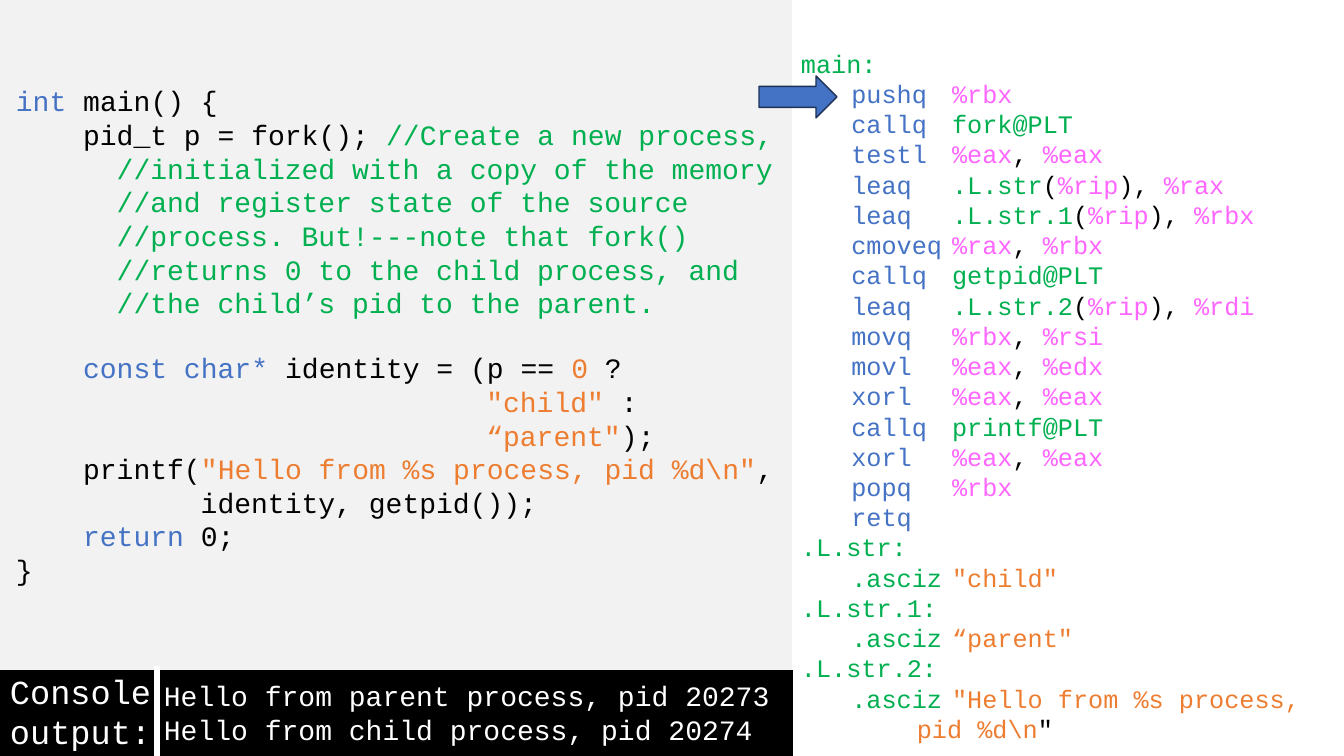
from pptx import Presentation, util as u
from pptx.dml.color import RGBColor
from pptx.enum import shapes, text
from lxml import etree

BLACK, WHITE, GREY = "000000", "FFFFFF", "F2F2F2"
BLUE, GREEN, ORANGE, PINK, NAVY = "4472C4", "00B050", "ED7D31", "FF66FF", "1E3256"
FONT = "Courier New"
PX = 914400 / 100.8
CHAR_WIDTH = 0.6
LINE_HEIGHT = 1.13

C_CODE = [
    (0, [("int", BLUE), (" main() {", BLACK)]),
    (4, [("pid_t p = fork(); ", BLACK), ("//Create a new process,", GREEN)]),
    (6, [("//initialized with a copy of the memory", GREEN)]),
    (6, [("//and register state of the source", GREEN)]),
    (6, [("//process. But!---note that fork()", GREEN)]),
    (6, [("//returns 0 to the child process, and", GREEN)]),
    (6, [("//the child’s pid to the parent.", GREEN)]),
    (4, [("const char* ", BLUE), ("identity = (p == ", BLACK), ("0", ORANGE), (" ?", BLACK)]),
    (28, [('"child"', ORANGE), (" :", BLACK)]),
    (28, [('“parent"', ORANGE), (");", BLACK)]),
    (4, [("printf(", BLACK), ('"Hello from %s process, pid %d\\n"', ORANGE), (",", BLACK)]),
    (11, [("identity, getpid());", BLACK)]),
    (4, [("return", BLUE), (" 0;", BLACK)]),
    (0, [("}", BLACK)]),
]
GAP_BEFORE = 7

ASSEMBLY = [
    ("main:",),
    ("pushq", "%rbx"),
    ("callq", "fork@PLT"),
    ("testl", "%eax", ", ", "%eax"),
    ("leaq", ".L.str", "(", "%rip", "), ", "%rax"),
    ("leaq", ".L.str.1", "(", "%rip", "), ", "%rbx"),
    ("cmoveq", "%rax", ", ", "%rbx"),
    ("callq", "getpid@PLT"),
    ("leaq", ".L.str.2", "(", "%rip", "), ", "%rdi"),
    ("movq", "%rbx", ", ", "%rsi"),
    ("movl", "%eax", ", ", "%edx"),
    ("xorl", "%eax", ", ", "%eax"),
    ("callq", "printf@PLT"),
    ("xorl", "%eax", ", ", "%eax"),
    ("popq", "%rbx"),
    ("retq",),
    (".L.str:",),
    (".asciz", '"child"'),
    (".L.str.1:",),
    (".asciz", '“parent"'),
    (".L.str.2:",),
    (".asciz", '"Hello from %s process,'),
    ("", " pid %d\\n", '"'),
]
ASSEMBLY_TABS = (3, 11)
OPERAND_COLORS = {"%": PINK, '"': ORANGE, "“": ORANGE, " ": ORANGE, "(": BLACK, ")": BLACK, ",": BLACK}

CONSOLE = ["Hello from parent process, pid 20273", "Hello from child process, pid 20274"]


def rgb(color):
    """Turn a hex string into a colour."""
    return RGBColor.from_string(color)


def px(*lengths):
    """Turn pixel lengths into EMU."""
    return [u.Emu(round(n * PX)) for n in lengths]


def chars(count, size):
    """Give the width of a number of characters as an EMU string."""
    return str(int(u.Pt(count * size * CHAR_WIDTH)))


def add_block(parent, kind, box, fill, line=None):
    """Add a filled preset shape."""
    sp = parent.add_shape(kind, *px(*box))
    sp.shadow.inherit = False
    sp.fill.solid()
    sp.fill.fore_color.rgb = rgb(fill)
    if line:
        sp.line.color.rgb = rgb(line)
        sp.line.width = u.Pt(1)
    else:
        sp.line.fill.background()


def add_text(parent, box, size, lines, tabs=()):
    """Add a text box of (indent, runs) lines and return its paragraphs."""
    tf = parent.add_textbox(*px(*box)).text_frame
    tf.word_wrap = True
    tf.auto_size = text.MSO_AUTO_SIZE.SHAPE_TO_FIT_TEXT
    for i, (indent, runs) in enumerate(lines):
        p = tf.paragraphs[0] if i == 0 else tf.add_paragraph()
        pPr = p._p.get_or_add_pPr()
        pPr.set("marL", chars(indent, size))
        pPr.set("indent", "0")
        if tabs:
            ns = pPr.nsmap["a"]
            tab_list = etree.SubElement(pPr, f"{{{ns}}}tabLst")
            for stop in tabs:
                etree.SubElement(tab_list, f"{{{ns}}}tab", pos=chars(stop, size), algn="l")
        for words, color in runs:
            r = p.add_run()
            r.text = words
            r.font.name = FONT
            r.font.size = u.Pt(size)
            r.font.color.rgb = rgb(color)
    return tf.paragraphs


def assembly_line(op, *operands):
    """Colour one line of assembly."""
    if op.endswith(":"):
        return 0, [(op, GREEN)]
    end = "\t" if operands else ""
    runs = [("\t" + op + end, GREEN if op.startswith(".") else BLUE)]
    for i, token in enumerate(operands):
        closing = i > 0 and token == '"'
        runs.append((token, BLACK if closing else OPERAND_COLORS.get(token[0], GREEN)))
    return 0, runs


def main():
    """Build the slide."""
    prs = Presentation()
    prs.slide_width, prs.slide_height = px(1344, 756)
    s = prs.slides.add_slide(prs.slide_layouts[6])
    rect = shapes.MSO_SHAPE.RECTANGLE

    add_block(s.shapes, rect, (0, 0, 792, 677), GREY)
    code = add_text(s.shapes, (6, 79, 782, 519), 20, C_CODE)
    code[GAP_BEFORE].space_before = u.Pt(20 * LINE_HEIGHT)

    console = s.shapes.add_group_shape().shapes
    add_block(console, rect, (0, 670, 793, 86), BLACK)
    add_text(console, (0, 666, 196, 92), 24, [(0, [("Console output:", WHITE)])])

    divider = s.shapes.add_connector(shapes.MSO_CONNECTOR.STRAIGHT, *px(157, 666, 157, 756))
    divider.line.color.rgb = rgb(WHITE)
    divider.line.width = u.Pt(4.5)
    spPr = divider._element.spPr
    etree.SubElement(spPr, f"{{{spPr.nsmap['a']}}}effectLst")

    add_text(s.shapes, (154, 674, 645, 78), 20, [(0, [(line, WHITE)]) for line in CONSOLE])
    add_text(s.shapes, (791, 43, 550, 713), 18,
             [assembly_line(*line) for line in ASSEMBLY], ASSEMBLY_TABS)
    add_block(s.shapes, shapes.MSO_SHAPE.RIGHT_ARROW, (759, 76, 78, 42), BLUE, NAVY)

    prs.save("out.pptx")


if __name__ == "__main__":
    main()
